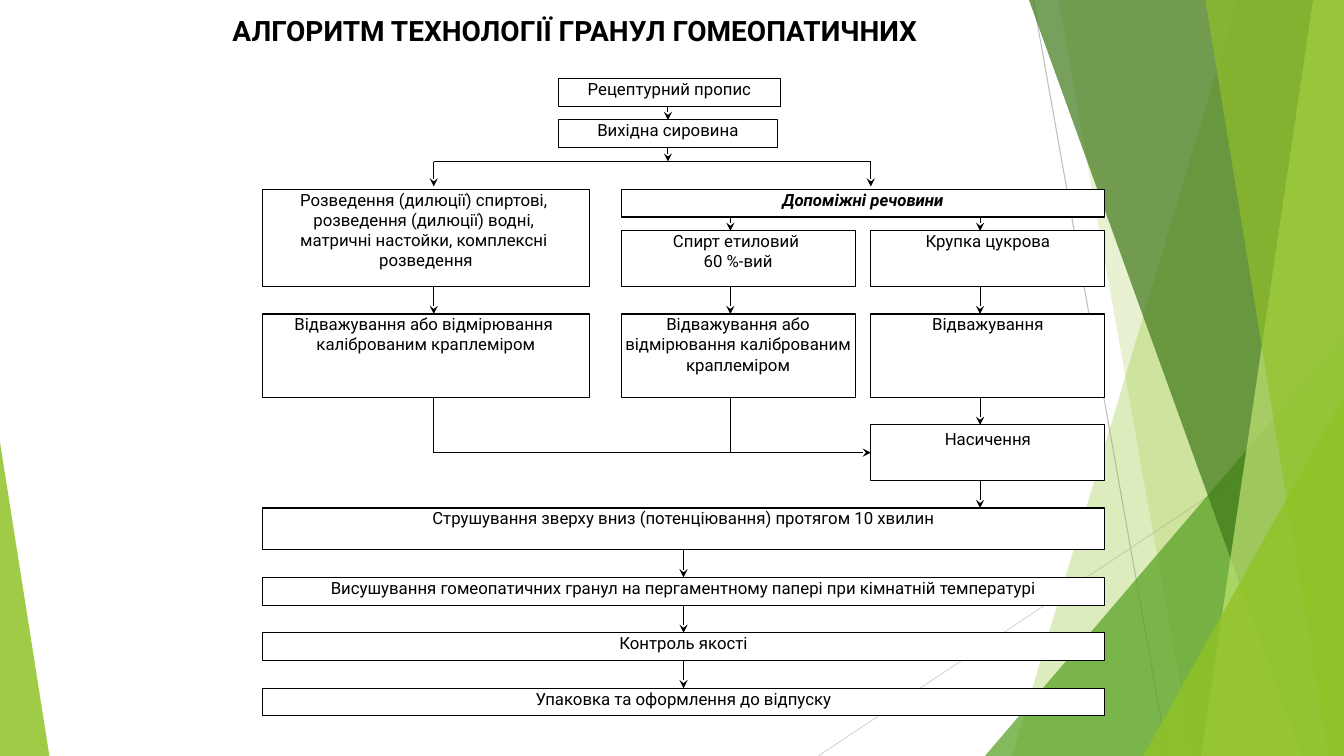
import pptx
import pptx.dml.color
import pptx.enum.shapes
import pptx.enum.text
import pptx.oxml
import pptx.oxml.ns
import pptx.util

Pt = pptx.util.Pt
RECTANGLE = pptx.enum.shapes.MSO_SHAPE.RECTANGLE
TRIANGLE = pptx.enum.shapes.MSO_SHAPE.ISOSCELES_TRIANGLE
STRAIGHT = pptx.enum.shapes.MSO_CONNECTOR.STRAIGHT

THEME = {
    "font": "Roboto", "title_size": 20, "box_size": 12, "line_width": 0.75,
    "ink": "000000", "paper": "FFFFFF", "grey": "BFBFBF", "pale_grey": "D9D9D9",
    "green": "90C226", "mid_green": "54A021", "dark_green": "3F7819", "light_green": "C0E474",
}

deck = pptx.Presentation()
deck.slide_width, deck.slide_height = Pt(960), Pt(540)
slide = deck.slides.add_slide(deck.slide_layouts[6])


def paint(shape, color, opacity=100):
    shape.shadow.inherit = False
    shape.line.fill.background()
    shape.fill.solid()
    shape.fill.fore_color.rgb = pptx.dml.color.RGBColor.from_string(THEME[color])
    if opacity < 100:
        tint = shape.fill._xPr.find(".//" + pptx.oxml.ns.qn("a:srgbClr"))
        tint.append(pptx.oxml.parse_xml(
            f'<a:alpha {pptx.oxml.ns.nsdecls("a")} val="{opacity * 1000}"/>'))


def draw_line(x1, y1, x2, y2, color, arrow=False):
    line = slide.shapes.add_connector(STRAIGHT, Pt(x1), Pt(y1), Pt(x2), Pt(y2))
    line.line.width = Pt(THEME["line_width"])
    line.line.color.rgb = pptx.dml.color.RGBColor.from_string(THEME[color])
    namespace = pptx.oxml.ns.nsdecls("a")
    if arrow:
        line.line._get_or_add_ln().append(pptx.oxml.parse_xml(
            f'<a:tailEnd {namespace} type="stealth"/>'))
    line._element.spPr.append(pptx.oxml.parse_xml(f"<a:effectLst {namespace}/>"))
    return line


# Green facets behind the diagram
draw_line(738, 0, 834, 540, "grey")
draw_line(960, 290, 584.5, 540, "pale_grey")

# Facets reach the right edge: top x, bottom x, colour, opacity;
# triangles: left, top, width, height, apex, colour, opacity
facets = [
    (884, 723, "green", 30),
    (756, 852, "green", 20),
    (703.5, 240, 256.5, 300, 1, "mid_green", 72),
    (735, 929.5, "dark_green", 70),
    (938, 858, "light_green", 70),
    (861, 949, "green", 65),
    (816.5, 283, 143.5, 257, 1, "green", 80),
    (0, 316, 35.3, 224, 0, "green", 85),
]
for *outline, color, opacity in facets:
    if len(outline) == 2:
        top_x, bottom_x = outline
        builder = slide.shapes.build_freeform(top_x, 0, scale=Pt(1))
        builder.add_line_segments([(960, 0), (960, 540), (bottom_x, 540)])
        facet = builder.convert_to_shape()
    else:
        *frame, apex = outline
        facet = slide.shapes.add_shape(TRIANGLE, *map(Pt, frame))
        facet.adjustments[0] = apex
    paint(facet, color, opacity)

# Title
title = slide.shapes.add_textbox(Pt(159), Pt(6), Pt(648), Pt(44.5))
title.text_frame.word_wrap = True
title.text_frame.text = "АЛГОРИТМ ТЕХНОЛОГІЇ ГРАНУЛ ГОМЕОПАТИЧНИХ"
heading = title.text_frame.paragraphs[0].runs[0].font
heading.name, heading.size, heading.bold = THEME["font"], Pt(THEME["title_size"]), True
heading.color.rgb = pptx.dml.color.RGBColor.from_string(THEME["ink"])

# Diagram grid
GRID_LEFT, GRID_TOP, COLUMN, ROW = 187.2, 56, 11.15, 9.9

# Boxes in grid units: column, row, width, height, text
AUXILIARY = "Допоміжні речовини"
SATURATION = "Насичення"
boxes = [
    (19, 0, 14.2, 2, "Рецептурний пропис"),
    (19, 3, 14, 2, "Вихідна сировина"),
    (0, 8, 21, 7, "Розведення (дилюції) спиртові, \vрозведення (дилюції) водні, \v"
                  "матричні настойки, комплексні \vрозведення"),
    (23, 8, 31, 2, AUXILIARY),
    (23, 11, 15, 4, "Спирт етиловий \v60 %-вий"),
    (39, 11, 15, 4, "Крупка цукрова"),
    (0, 17, 21, 6, "Відважування або відмірювання \nкаліброваним краплеміром"),
    (23, 17, 15, 6, "Відважування або відмірювання каліброваним краплеміром"),
    (39, 17, 15, 6, "Відважування"),
    (39, 25, 15, 4, SATURATION),
    (0, 31, 54, 3, "Струшування зверху вниз (потенціювання) протягом 10 хвилин"),
    (0, 36, 54, 2, "Висушування гомеопатичних гранул на пергаментному папері "
                   "при кімнатній температурі"),
    (0, 40, 54, 2, "Контроль якості"),
    (0, 44, 54, 2, "Упаковка та оформлення до відпуску"),
]
side_middles = {}
for column, row, width, height, text in boxes:
    step = slide.shapes.add_shape(
        RECTANGLE, Pt(GRID_LEFT + column * COLUMN), Pt(GRID_TOP + row * ROW),
        Pt(width * COLUMN), Pt(height * ROW))
    paint(step, "paper")
    step.line.width = Pt(THEME["line_width"])
    step.line.color.rgb = pptx.dml.color.RGBColor.from_string(THEME["ink"])
    frame = step.text_frame
    frame.word_wrap = True
    frame.vertical_anchor = pptx.enum.text.MSO_ANCHOR.TOP
    frame.margin_left = frame.margin_right = frame.margin_bottom = 0
    frame.margin_top = Pt(3 if text == SATURATION else 0)
    frame.text = text
    for paragraph in frame.paragraphs:
        paragraph.alignment = pptx.enum.text.PP_ALIGN.CENTER
        for run in paragraph.runs:
            run.font.name, run.font.size = THEME["font"], Pt(THEME["box_size"])
            run.font.bold = run.font.italic = text == AUXILIARY
            run.font.color.rgb = pptx.dml.color.RGBColor.from_string(THEME["ink"])
    side_middles[column + width / 2, row] = step, 0
    side_middles[column, row + height / 2] = step, 1
    side_middles[column + width / 2, row + height] = step, 2
    side_middles[column + width, row + height / 2] = step, 3

# Flow lines in grid units: start column, start row, end column, end row, arrow
flows = [
    (26, 0 + 2, 26, 3, True), (26, 5, 26, 6, True),
    (11, 6, 39, 6, False), (11, 6, 11, 7.8, True), (39, 6, 39, 7.8, True),
    (30, 10, 30, 11, True), (46, 10, 46, 11, True),
    (11, 15, 11, 17, True), (30, 15, 30, 17, True), (46, 15, 46, 17, True),
    (11, 23, 11, 27, False), (30, 23, 30, 27, False), (11, 27, 39, 27, True),
    (46, 23, 46, 25, True), (46, 29, 46, 31, True),
    (27, 34, 27, 36, True), (27, 38, 27, 40, True), (27, 42, 27, 44, True),
]
for start_column, start_row, end_column, end_row, arrow in flows:
    flow = draw_line(
        GRID_LEFT + start_column * COLUMN, GRID_TOP + start_row * ROW,
        GRID_LEFT + end_column * COLUMN, GRID_TOP + end_row * ROW, "ink", arrow)
    if (start_column, start_row) in side_middles:
        flow.begin_connect(*side_middles[start_column, start_row])
    if (end_column, end_row) in side_middles:
        flow.end_connect(*side_middles[end_column, end_row])

deck.save("out.pptx")
